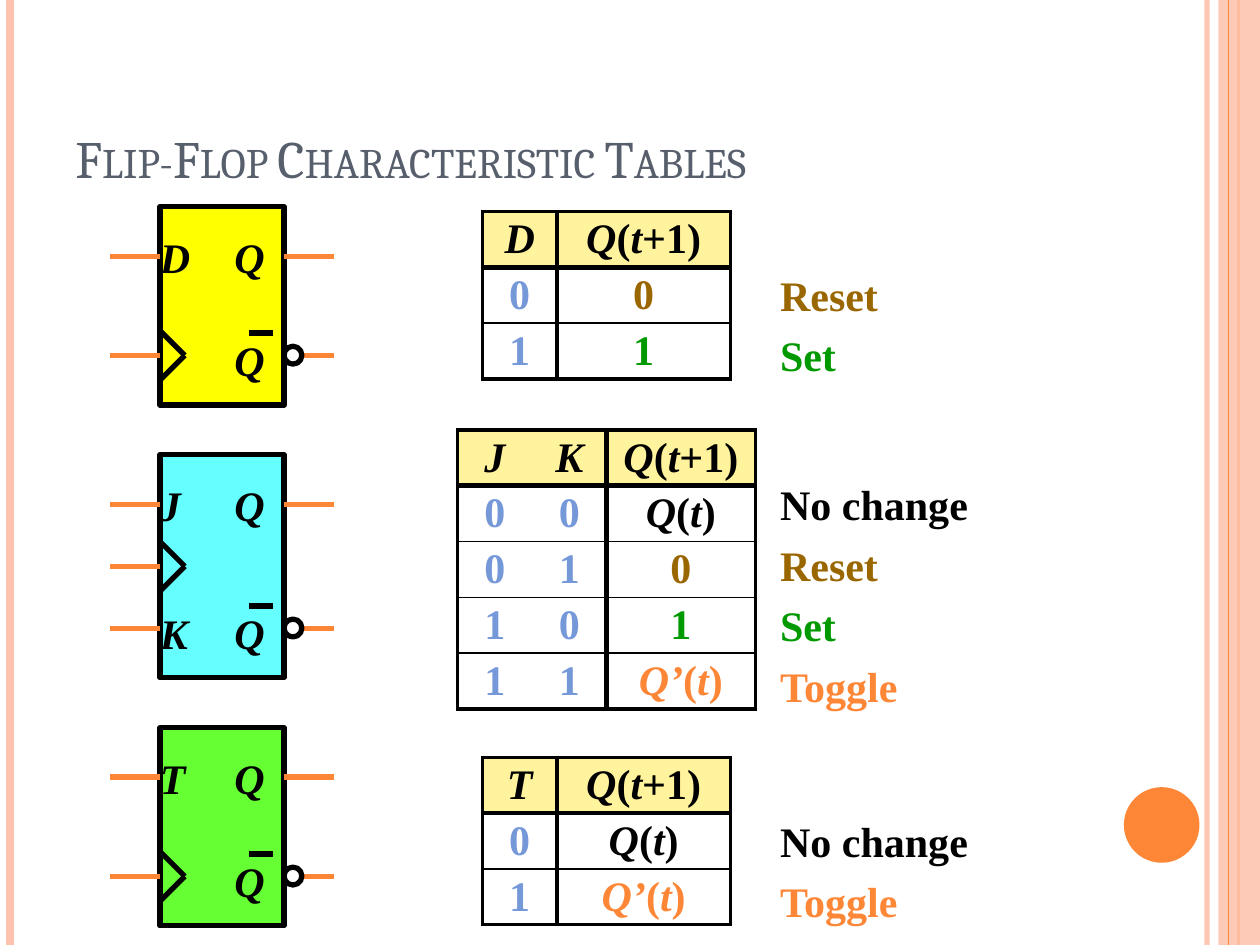
import dataclasses
import itertools
import typing

import pptx
import pptx.dml.color
import pptx.enum.shapes
import pptx.enum.text
import pptx.oxml
import pptx.oxml.ns
import pptx.util

MODULE = pptx.util.Cm(0.5)
GRID_LEFT, GRID_TOP = pptx.util.Inches(1.27), pptx.util.Inches(1.64)
WIDTH, HEIGHT = pptx.util.Inches(10), pptx.util.Inches(7.5)
BLACK, ORANGE, PEACH, INPUT, HEADER = "000000", "FE8637", "FEC3AE", "7598D9", "FFF39D"
BROWN, GREEN = "996600", "009900"
MEANING_COLOURS = {
    "0": BROWN, "Reset": BROWN, "1": GREEN, "Set": GREEN,
    "Q(t)": BLACK, "No change": BLACK, "Q’(t)": ORANGE, "Toggle": ORANGE,
}
BODY_FONT = {"name": "Times New Roman", "size": pptx.util.Pt(24), "bold": True}
TITLE_FONT = {"name": "Cambria", "size": pptx.util.Pt(30)}
SHAPES = pptx.enum.shapes.MSO_SHAPE
ANCHOR = pptx.enum.text.MSO_ANCHOR
MARGINS = ("margin_left", "margin_right", "margin_top", "margin_bottom")


@dataclasses.dataclass
class FlipFlop:
    """One symbol with its table; places are rows of the grid."""
    top: float
    fill: str
    rows: int
    inputs: dict[str, float]
    clock: float
    inverted: float
    table_column: float
    table_top: float
    output_width: float
    table: list[list[str]]
    labels_top: float
    labels: list[str]


FLIP_FLOPS = [
    FlipFlop(0, "FFFF00", 8, {"D": 2}, 6, 6, 13, 0.2, 7,
             [["D", "Q(t+1)"], ["0", "0"], ["1", "1"]],
             2.13, ["Reset", "Set"]),
    FlipFlop(10, "66FFFF", 9, {"J": 2, "K": 7}, 4.5, 7, 12, 9, 6,
             [["J", "K", "Q(t+1)"], ["0", "0", "Q(t)"], ["0", "1", "0"],
              ["1", "0", "1"], ["1", "1", "Q’(t)"]],
             10.57, ["No change", "Reset", "Set", "Toggle"]),
    FlipFlop(21, "66FF33", 8, {"T": 2}, 6, 6, 13, 22.2, 7,
             [["T", "Q(t+1)"], ["0", "Q(t)"], ["1", "Q’(t)"]],
             24.13, ["No change", "Toggle"]),
]


def colour(value: str) -> pptx.dml.color.RGBColor:
    return pptx.dml.color.RGBColor.from_string(value)


def grid_box(column: float, row: float, width: float, height: float) -> list[int]:
    return [int(GRID_LEFT + column * MODULE), int(GRID_TOP + row * MODULE),
            int(width * MODULE), int(height * MODULE)]


def slide_box(left: float, top: float, width: float, height: float) -> list[int]:
    """Turn shares of the slide's size into lengths."""
    return [int(left * WIDTH), int(top * HEIGHT), int(width * WIDTH), int(height * HEIGHT)]


def set_opacity(fill: typing.Any, percent: int) -> None:
    element = fill._xPr.find(".//" + pptx.oxml.ns.qn("a:srgbClr"))
    alpha = element.makeelement(pptx.oxml.ns.qn("a:alpha"), {"val": str(percent * 1000)})
    element.append(alpha)


def add_line(shapes: typing.Any, start: tuple[int, int], end: tuple[int, int],
             line_colour: str, points: float) -> typing.Any:
    line = shapes.add_connector(pptx.enum.shapes.MSO_CONNECTOR.STRAIGHT, *start, *end)
    line.line.color.rgb = colour(line_colour)
    line.line.width = pptx.util.Pt(points)
    properties = line._element.spPr
    properties.append(properties.makeelement(pptx.oxml.ns.qn("a:effectLst"), {}))
    return line


def add_grid_line(shapes: typing.Any, start: tuple[float, float],
                  end: tuple[float, float], line_colour: str) -> None:
    places = [tuple(grid_box(*point, 0, 0)[:2]) for point in (start, end)]
    add_line(shapes, *places, line_colour, 3)


def add_filled(shapes: typing.Any, kind: typing.Any, box: list[int], fill: str,
               outlined: bool = False) -> typing.Any:
    shape = shapes.add_shape(kind, *box)
    shape.shadow.inherit = False
    shape.fill.solid()
    shape.fill.fore_color.rgb = colour(fill)
    if outlined:
        shape.line.color.rgb = colour(BLACK)
        shape.line.width = pptx.util.Pt(3)
    else:
        shape.line.fill.background()
    return shape


def add_run(paragraph: typing.Any, text: str, text_colour: str, font: dict) -> typing.Any:
    run = paragraph.add_run()
    run.text = text
    for name, value in font.items():
        setattr(run.font, name, value)
    run.font.color.rgb = colour(text_colour)
    return run


def add_formula(paragraph: typing.Any, text: str, text_colour: str) -> None:
    """Set variables in italics, and digits and signs upright."""
    for italic, letters in itertools.groupby(text, lambda sign: sign.isalpha() or sign == "’"):
        add_run(paragraph, "".join(letters), text_colour, BODY_FONT | {"italic": italic})


def add_text_frame(shapes: typing.Any, box: list[int]) -> typing.Any:
    frame = shapes.add_textbox(*box).text_frame
    for name in MARGINS:
        setattr(frame, name, 0)
    frame.word_wrap = True
    return frame


def add_pin_name(shapes: typing.Any, name: str, column: float, row: float) -> None:
    frame = add_text_frame(shapes, grid_box(column, row, 2, 2))
    add_formula(frame.paragraphs[0], name, BLACK)


def add_symbol(slide: typing.Any, item: FlipFlop) -> None:
    shapes = slide.shapes.add_group_shape().shapes
    add_filled(shapes, SHAPES.RECTANGLE, grid_box(0, item.top, 5, item.rows), item.fill, True)
    clock, inverted = item.top + item.clock, item.top + item.inverted
    for name, pin in item.inputs.items():
        offset = 1 if pin == 2 else 0.85
        add_pin_name(shapes, name, 0, item.top + pin - offset)
    for edge in (clock - 1, clock + 1):
        add_grid_line(shapes, (0, edge), (1, clock), BLACK)
    for pin in (*item.inputs.values(), item.clock):
        add_grid_line(shapes, (0, item.top + pin), (-2, item.top + pin), ORANGE)
    for row in (item.top + 2, inverted):
        add_grid_line(shapes, (7, row), (5, row), ORANGE)
    add_pin_name(shapes, "Q", 3, item.top + 1)
    add_filled(shapes, SHAPES.OVAL, grid_box(5, inverted - 0.37, 0.72, 0.72), "FFFFFF", True)
    add_pin_name(shapes, "Q", 3, inverted - 0.85)
    add_grid_line(shapes, (4.57, inverted - 0.9), (3.57, inverted - 0.9), BLACK)


def set_borders(cell: typing.Any, widths: dict[str, float]) -> None:
    properties = cell._tc.get_or_add_tcPr()
    for index, (side, points) in enumerate(widths.items()):
        paint = f'<a:solidFill><a:srgbClr val="{BLACK}"/></a:solidFill>' if points else "<a:noFill/>"
        properties.insert(index, pptx.oxml.parse_xml(
            f'<a:ln{side} {pptx.oxml.ns.nsdecls("a")} w="{int(points * 12700)}">{paint}</a:ln{side}>'))


def add_state_table(slide: typing.Any, item: FlipFlop) -> None:
    last_row, output = len(item.table) - 1, len(item.table[0]) - 1
    widths = [3] * output + [item.output_width]
    box = grid_box(item.table_column, item.table_top, sum(widths), 2.25 * (last_row + 1))
    table = slide.shapes.add_table(last_row + 1, output + 1, *box).table
    table.first_row = table.horz_banding = False
    for column, width in zip(table.columns, widths):
        column.width = int(width * MODULE)
    vertical = [2.25] + [0] * (output - 1) + [3, 2.25]
    horizontal = [2.25, 3] + [1] * (last_row - 1) + [2.25]
    for row, texts in enumerate(item.table):
        table.rows[row].height = int(2.25 * MODULE)
        for column, text in enumerate(texts):
            cell = table.cell(row, column)
            for name in MARGINS:
                setattr(cell, name, 0)
            cell.vertical_anchor = ANCHOR.MIDDLE
            if row == 0:
                cell.fill.solid()
                cell.fill.fore_color.rgb = colour(HEADER)
                text_colour = BLACK
            else:
                cell.fill.background()
                text_colour = MEANING_COLOURS[text] if column == output else INPUT
            paragraph = cell.text_frame.paragraphs[0]
            paragraph.alignment = pptx.enum.text.PP_ALIGN.CENTER
            add_formula(paragraph, text, text_colour)
            set_borders(cell, {"L": vertical[column], "R": vertical[column + 1],
                               "T": horizontal[row], "B": horizontal[row + 1]})


def add_labels(slide: typing.Any, item: FlipFlop) -> None:
    frame = add_text_frame(slide.shapes, grid_box(25, item.labels_top, 9, 2.44 * len(item.labels)))
    for index, label in enumerate(item.labels):
        paragraph = frame.add_paragraph() if index else frame.paragraphs[0]
        paragraph.line_spacing = 1.2
        add_run(paragraph, label, MEANING_COLOURS[label], BODY_FONT)


def add_frame(slide: typing.Any) -> None:
    def add_rule(share: float, line_colour: str, points: float) -> typing.Any:
        left = int(share * WIDTH)
        return add_line(slide.shapes, (left, 0), (left, HEIGHT), line_colour, points)

    set_opacity(add_rule(0.958, PEACH, 3).line.fill, 93)
    add_rule(0.008, PEACH, 4.5)
    add_rule(0.983, ORANGE, 1.5)
    band = add_filled(slide.shapes, SHAPES.RECTANGLE, slide_box(0.967, 0, 0.033, 1), PEACH)
    set_opacity(band.fill, 87)
    add_rule(0.975, ORANGE, 0.75)
    add_filled(slide.shapes, SHAPES.OVAL, slide_box(0.892, 0.833, 0.06, 0.08), ORANGE)


def add_title(slide: typing.Any) -> None:
    frame = slide.shapes.add_textbox(*slide_box(0.05, 0.04, 0.842, 0.167)).text_frame
    frame.word_wrap = True
    frame.vertical_anchor = ANCHOR.BOTTOM
    run = add_run(frame.paragraphs[0], "Flip-Flop Characteristic Tables", "575F6D", TITLE_FONT)
    run.font._element.set("cap", "small")


def main() -> None:
    presentation = pptx.Presentation()
    presentation.slide_width, presentation.slide_height = WIDTH, HEIGHT
    slide = presentation.slides.add_slide(presentation.slide_layouts[6])
    add_frame(slide)
    add_title(slide)
    for item in FLIP_FLOPS:
        add_symbol(slide, item)
        add_state_table(slide, item)
        add_labels(slide, item)
    presentation.save("out.pptx")


if __name__ == "__main__":
    main()
